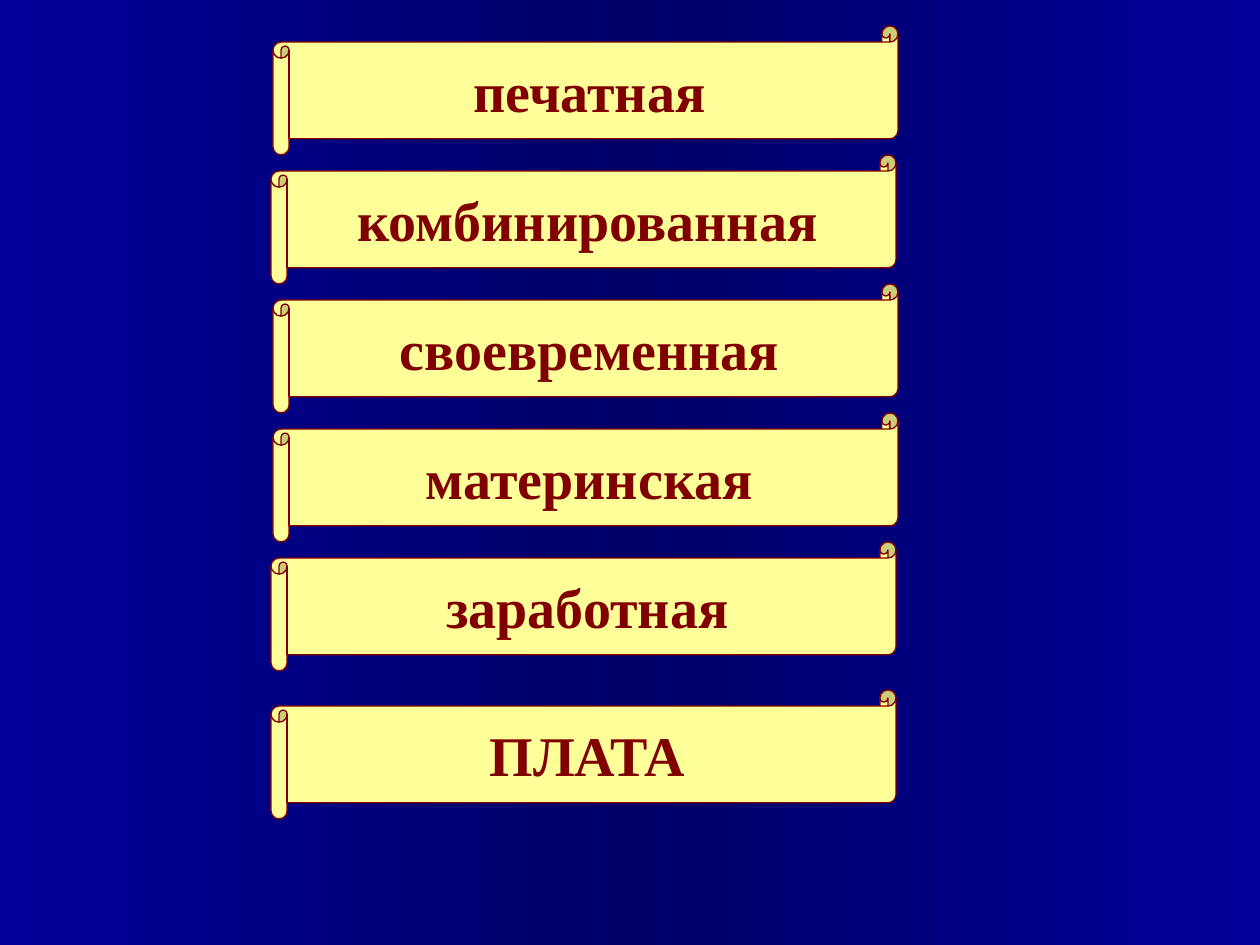
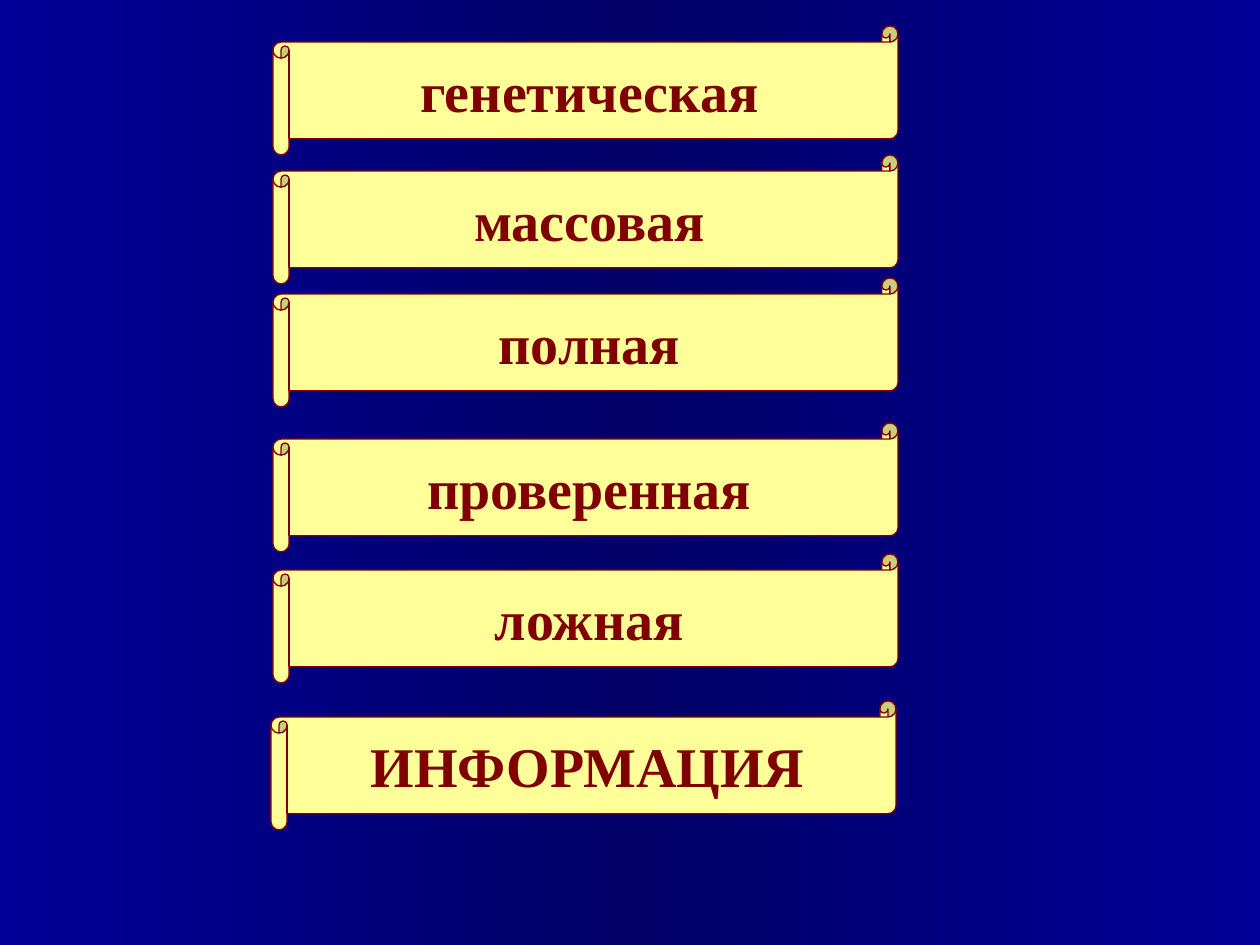
from copy import deepcopy
from dataclasses import dataclass

from pptx import Presentation
from pptx.dml.color import RGBColor
from pptx.enum.shapes import MSO_SHAPE
from pptx.enum.text import MSO_ANCHOR, PP_ALIGN
from pptx.util import Pt

PX = 914400 / 126


@dataclass(frozen=True)
class Theme:
    """Colours and type sizes shared by the slides."""
    edge: RGBColor = RGBColor(0x00, 0x00, 0x99)
    middle: RGBColor = RGBColor(0x00, 0x00, 0x66)
    scroll: RGBColor = RGBColor(0xFF, 0xFF, 0x99)
    ink: RGBColor = RGBColor(0x80, 0x00, 0x00)
    font: str = "Times New Roman"
    size: int = 32
    line: float = 0.75


THEME = Theme()
SCROLL_W, SCROLL_H = 625, 129
LEFT, LEFT_SHIFTED = 273, 271
TOP = 26
EVEN_TOPS = [TOP + i * SCROLL_H for i in range(5)]

PAYMENT = list(zip(
    ["печатная", "комбинированная", "своевременная", "материнская", "заработная", "ПЛАТА"],
    [LEFT, LEFT_SHIFTED, LEFT, LEFT, LEFT_SHIFTED, LEFT_SHIFTED],
    EVEN_TOPS + [690],
))
INFORMATION = list(zip(
    ["генетическая", "массовая", "полная", "проверенная", "ложная", "ИНФОРМАЦИЯ"],
    [LEFT] * 5 + [LEFT_SHIFTED],
    EVEN_TOPS[:2] + [278, 423, 554, 701],
))


def px(n):
    """Turn pixels into EMU."""
    return round(n * PX)


def paint_background(s):
    """Fill the slide with a gradient that darkens in the middle."""
    fill = s.background.fill
    fill.gradient()
    fill.gradient_angle = 0
    stops = fill._fill._gradFill.gsLst
    stops.append(deepcopy(stops[-1]))
    colours = (THEME.edge, THEME.middle, THEME.edge)
    for stop, colour, position in zip(fill.gradient_stops, colours, (0, 0.5, 1)):
        stop.color.rgb = colour
        stop.position = position


def add_scroll(s, text, left, top, width, height):
    """Draw one scroll with its word in the given box."""
    sp = s.shapes.add_shape(MSO_SHAPE.HORIZONTAL_SCROLL, px(left), px(top), px(width), px(height))
    sp.shadow.inherit = False
    sp.adjustments[0] = 0.125
    sp.fill.solid()
    sp.fill.fore_color.rgb = THEME.scroll
    sp.line.color.rgb = THEME.ink
    sp.line.width = Pt(THEME.line)
    tf = sp.text_frame
    tf.word_wrap = False
    tf.vertical_anchor = MSO_ANCHOR.MIDDLE
    p = tf.paragraphs[0]
    p.alignment = PP_ALIGN.CENTER
    r = p.add_run()
    r.text = text
    r.font.name = THEME.font
    r.font.size = Pt(THEME.size)
    r.font.bold = True
    r.font.color.rgb = THEME.ink


def add_word_slide(prs, scrolls):
    """Add a slide of adjectives above the noun they describe."""
    s = prs.slides.add_slide(prs.slide_layouts[6])
    paint_background(s)
    for text, left, top in scrolls:
        add_scroll(s, text, left, top, SCROLL_W, SCROLL_H)


def main():
    """Build and save the presentation."""
    prs = Presentation()
    prs.slide_width, prs.slide_height = px(1260), px(945)
    for scrolls in (PAYMENT, INFORMATION):
        add_word_slide(prs, scrolls)
    prs.save("out.pptx")


if __name__ == "__main__":
    main()
